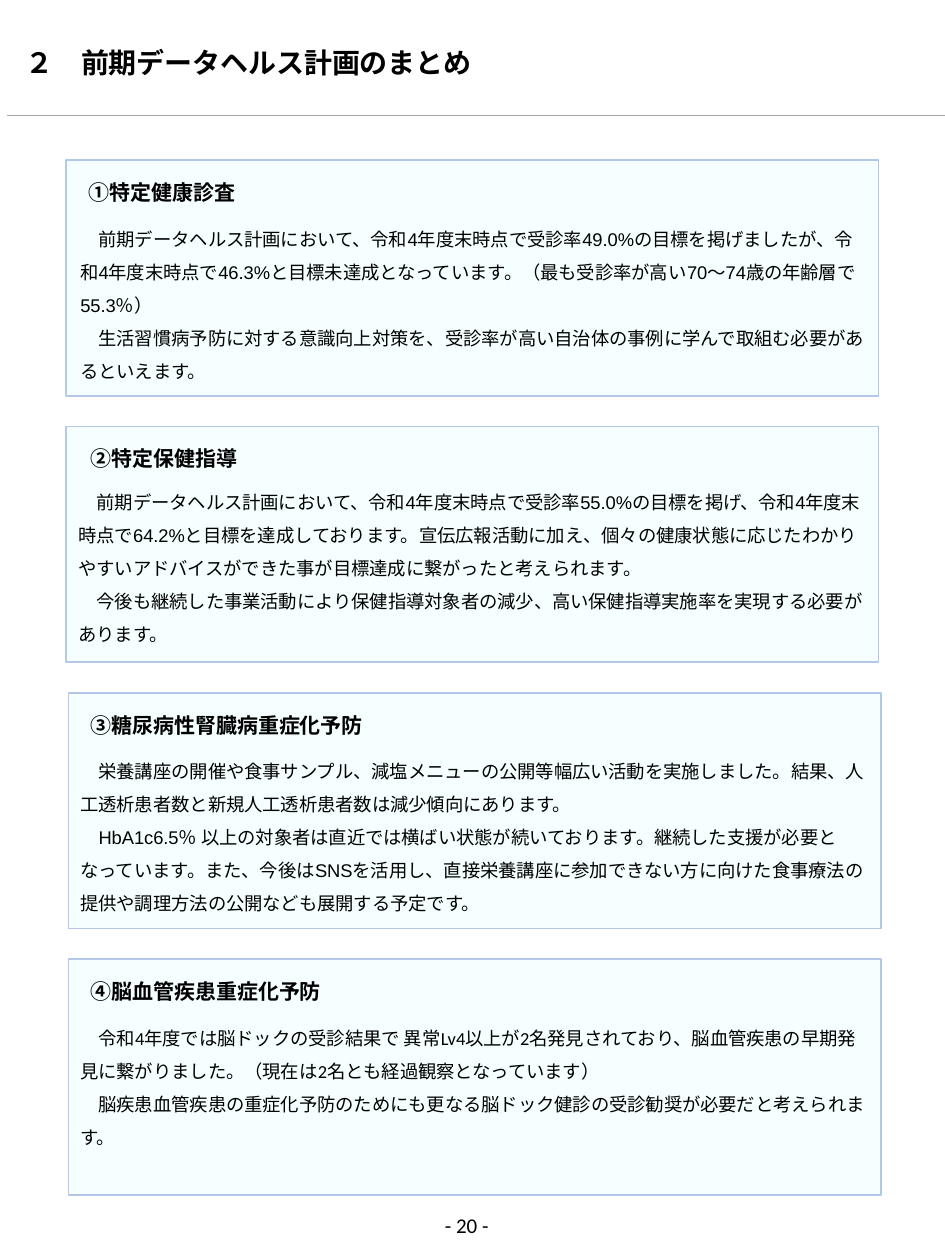
from dataclasses import dataclass
from lxml.etree import SubElement
from pptx import Presentation
from pptx.dml.color import RGBColor
from pptx.enum.lang import MSO_LANGUAGE_ID
from pptx.enum.shapes import MSO_CONNECTOR, MSO_SHAPE
from pptx.enum.text import MSO_ANCHOR, MSO_AUTO_SIZE, PP_ALIGN
from pptx.oxml.ns import qn
from pptx.util import Cm, Pt


@dataclass(frozen=True)
class Theme:
    ink: RGBColor = RGBColor(0, 0, 0)
    fill: RGBColor = RGBColor(0xCC, 0xFF, 0xFF)
    edge: RGBColor = RGBColor(0xB4, 0xC7, 0xE7)
    rule: RGBColor = RGBColor(0xA6, 0xA6, 0xA6)
    opacity: int = 18000
    title: float = 16
    head: float = 12
    body: float = 10.5
    sans: str = "Arial"
    alt: str = "Calibri"


@dataclass(frozen=True)
class Panel:
    left: float
    head_left: float
    body_left: float
    body_gap: float
    body_width: float
    head: str
    paras: tuple


THEME = Theme()
TOP, PITCH, WIDTH, HEIGHT = 3.23, 5.37, 16.38, 4.75

PANELS = (
    Panel(1.33, 1.53, 1.37, 1.02, 16.36, "①特定健康診査", (
        (("　前期データヘルス計画において、令和4年度末時点で受診率49.0%の目標を掲げましたが、"
          "令和4年度末時点で46.3%と目標未達成となっています。"
          "（最も受診率が高い70～74歳の年齢層で55.3％）", THEME.sans),),
        (("　生活習慣病予防に対する意識向上対策を、受診率が高い自治体の事例に学んで"
          "取組む必要があるといえます。", THEME.sans),),
    )),
    Panel(1.33, 1.57, 1.33, 0.95, 16.36, "②特定保健指導", (
        (("　前期データヘルス計画において、令和4年度末時点で受診率55.0%の目標を掲げ、"
          "令和4年度末時点で64.2%と目標を達成しております。宣伝広報活動に加え、"
          "個々の健康状態に応じたわかりやすいアドバイスができた事が"
          "目標達成に繋がったと考えられます。", THEME.sans),),
        (("　今後も継続した事業活動により保健指導対象者の減少、"
          "高い保健指導実施率を実現する必要があります。", THEME.sans),),
    )),
    Panel(1.38, 1.57, 1.37, 1.01, 16.43, "③糖尿病性腎臓病重症化予防", (
        (("　栄養講座の開催や食事サンプル、減塩メニューの公開等幅広い活動を実施しました。"
          "結果、人工透析患者数と新規人工透析患者数は減少傾向にあります。", THEME.sans),),
        (("　HbA1c6.5％ 以上の対象者は直近では横ばい状態が続いております。"
          "継続した支援が必要となっています。また、今後はSNSを活用し、"
          "直接栄養講座に参加できない方に向けた食事療法の提供や"
          "調理方法の公開なども展開する予定です。", THEME.sans),),
    )),
    Panel(1.38, 1.57, 1.37, 1.02, 16.43, "④脳血管疾患重症化予防", (
        (("　", THEME.sans),
         ("令和4年度では脳ドックの受診結果で 異常Lv4以上が2名発見されており、"
          "脳血管疾患の早期発見に繋がりました。"
          "（現在は2名とも経過観察となっています）", THEME.alt)),
        (("　脳疾患血管疾患の重症化予防のためにも更なる脳ドック健診の受診勧奨が"
          "必要だと考えられます。", THEME.sans),),
    )),
)


def add_text(slide, box, paras, size, bold=False, wrap=False,
             anchor=MSO_ANCHOR.TOP, align=PP_ALIGN.LEFT, space=None):
    frame = slide.shapes.add_textbox(*map(Cm, box)).text_frame
    frame.word_wrap = wrap
    frame.auto_size = MSO_AUTO_SIZE.SHAPE_TO_FIT_TEXT
    frame.vertical_anchor = anchor
    for index, runs in enumerate(paras):
        para = frame.add_paragraph() if index else frame.paragraphs[0]
        para.alignment = align
        para.line_spacing = space
        for text, face in runs:
            run = para.add_run()
            run.text = text
            font = run.font
            font.name, font.size, font.bold = face, Pt(size), bold
            font.color.rgb = THEME.ink
            font.language_id = MSO_LANGUAGE_ID.JAPANESE


def add_frame(slide, left, top):
    rect = slide.shapes.add_shape(
        MSO_SHAPE.RECTANGLE, Cm(left), Cm(top), Cm(WIDTH), Cm(HEIGHT))
    rect.shadow.inherit = False
    rect.fill.solid()
    rect.fill.fore_color.rgb = THEME.fill
    tint = rect.fill._xPr.find(qn("a:solidFill"))[0]
    SubElement(tint, qn("a:alpha"), val=str(THEME.opacity))
    rect.line.color.rgb = THEME.edge
    rect.line.width = Pt(1)


def add_panel(slide, panel, top):
    add_frame(slide, panel.left, top)
    width = 0.52 + 0.43 * len(panel.head)
    add_text(slide, (panel.head_left, top + 0.26, width, 0.77),
             [[(panel.head, THEME.sans)]], THEME.head, bold=True)
    add_text(slide, (panel.body_left, top + panel.body_gap, panel.body_width, 3.56),
             panel.paras, THEME.body, wrap=True, space=1.5)


def add_rule(slide):
    line = slide.shapes.add_connector(
        MSO_CONNECTOR.STRAIGHT, Cm(0.15), Cm(2.32), Cm(19.05), Cm(2.32))
    line.line.color.rgb = THEME.rule
    line.line.width = Pt(0.5)
    SubElement(line._element.spPr, qn("a:effectLst"))


def main():
    deck = Presentation()
    deck.slide_width, deck.slide_height = Cm(19.05), Cm(25.4)
    slide = deck.slides.add_slide(deck.slide_layouts[6])
    add_text(slide, (0.26, 0.79, 9.63, 0.94),
             [[("２　前期データヘルス計画のまとめ", THEME.sans)]],
             THEME.title, bold=True, anchor=MSO_ANCHOR.MIDDLE)
    add_rule(slide)
    for index, panel in enumerate(PANELS):
        add_panel(slide, panel, TOP + PITCH * index)
    add_text(slide, (8.71, 24.31, 1.4, 0.77), [[("- 20 -", THEME.alt)]],
             THEME.head, anchor=MSO_ANCHOR.MIDDLE, align=PP_ALIGN.CENTER)
    deck.save("out.pptx")


if __name__ == "__main__":
    main()
